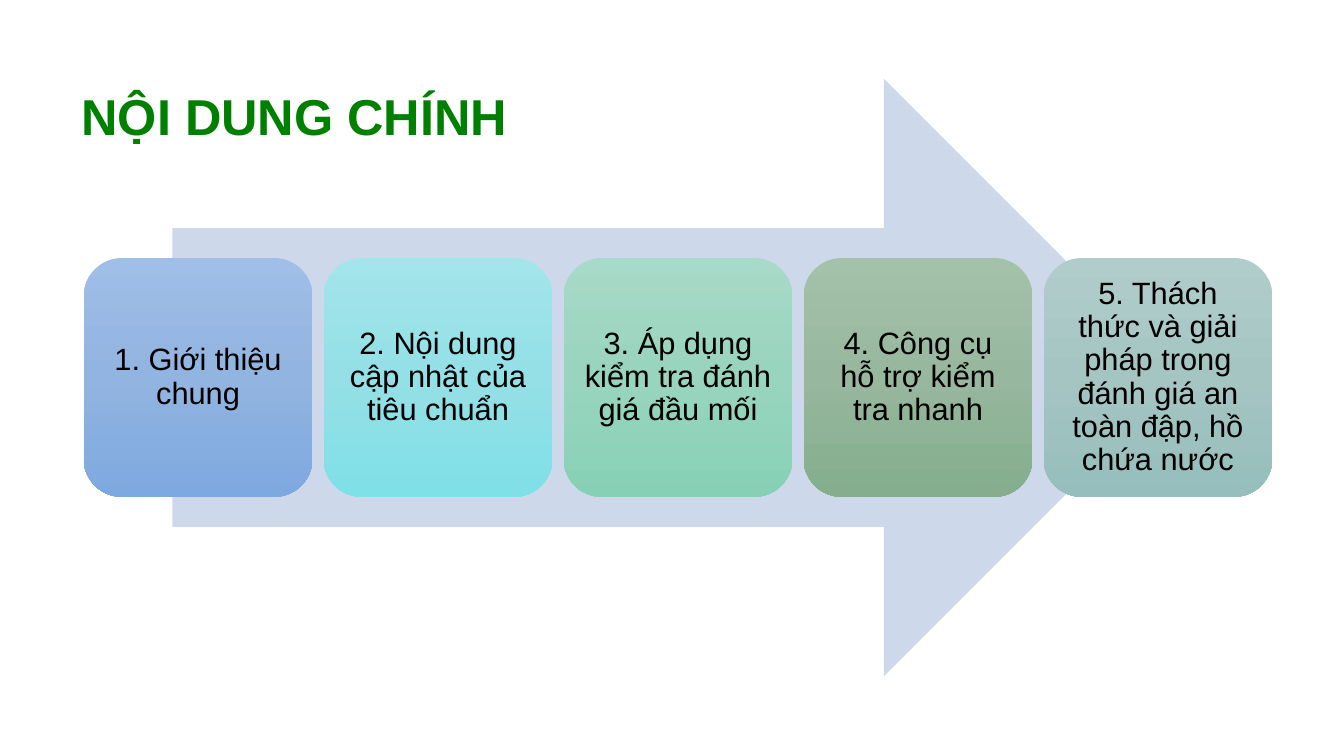
from copy import deepcopy
from dataclasses import dataclass

from pptx import Presentation
from pptx.dml.color import RGBColor as RGB
from pptx.enum.shapes import MSO_SHAPE as SHAPE
from pptx.enum.text import MSO_ANCHOR as ANCHOR, PP_ALIGN as ALIGN
from pptx.util import Inches, Pt


@dataclass(frozen=True)
class Theme:
    font: str = "Arial"
    title: str = "008000"
    text: str = "000000"
    arrow: str = "CDD9EA"
    title_size: float = 36
    card_size: float = 22


@dataclass(frozen=True)
class Grid:
    """Five columns; row 0 is the band that holds the cards."""
    left: float = 0.83
    top: float = 2.56
    col: float = 2.38
    row: float = 2.37
    gap: float = 0.11

    def box(self, col: float, row: float, cols: float, rows: float,
            gap: float = 0) -> tuple:
        return (Inches(self.left + col * self.col),
                Inches(self.top + row * self.row),
                Inches(cols * self.col - gap), Inches(rows * self.row))


@dataclass(frozen=True)
class Card:
    text: str
    stops: tuple  # colours from top to bottom


THEME = Theme()
GRID = Grid()
CARDS = [
    Card("1. Giới thiệu chung", ("9FBEE8", "92B4E0", "7EA9E0")),
    Card("2. Nội dung cập nhật của tiêu chuẩn", ("A2E5EB", "94E0E6", "7FE0E7")),
    Card("3. Áp dụng kiểm tra đánh giá đầu mối", ("A7DAC8", "99D4BE", "86D1B6")),
    Card("4. Công cụ hỗ trợ kiểm tra nhanh", ("A4C2AA", "97B79E", "84AE8D")),
    Card("5. Thách thức và giải pháp trong đánh giá an toàn đập, hồ chứa nước",
         ("B1CDCB", "A5C5C3", "95BEBC")),
]


def write(sp, text: str, *, size: float, color: str, bold: bool = False,
          align=ALIGN.LEFT, anchor=ANCHOR.MIDDLE, spacing: float = 1.0,
          inset: float = 0.1) -> None:
    tf = sp.text_frame
    tf.word_wrap = True
    tf.vertical_anchor = anchor
    tf.margin_left = tf.margin_right = Inches(inset)
    tf.margin_top = tf.margin_bottom = Inches(inset / 2)
    p = tf.paragraphs[0]
    p.alignment = align
    p.line_spacing = spacing
    r = p.add_run()
    r.text = text
    r.font.name = THEME.font
    r.font.size = Pt(size)
    r.font.bold = bold
    r.font.color.rgb = RGB.from_string(color)


def add_plain_shape(s, kind, box: tuple):
    sp = s.shapes.add_shape(kind, *box)
    sp.shadow.inherit = False
    sp.line.fill.background()
    return sp


def fill_gradient(sp, colors: tuple) -> None:
    sp.fill.gradient()
    sp.fill.gradient_angle = 270
    # The default gradient has two stops; add the middle one
    gs_list = sp._element.spPr.xpath(".//a:gsLst")[0]
    gs_list.insert(1, deepcopy(gs_list[0]))
    for i, (stop, color) in enumerate(zip(sp.fill.gradient_stops, colors)):
        stop.position = i / (len(colors) - 1)
        stop.color.rgb = RGB.from_string(color)


def add_card(s, index: int, card: Card) -> None:
    sp = add_plain_shape(s, SHAPE.ROUNDED_RECTANGLE,
                         GRID.box(index, 0, 1, 1, GRID.gap))
    fill_gradient(sp, card.stops)
    write(sp, card.text, size=THEME.card_size, color=THEME.text,
          align=ALIGN.CENTER, spacing=0.9, inset=0.09)


def main() -> None:
    prs = Presentation()
    prs.slide_width, prs.slide_height = Inches(13.33), Inches(7.5)
    s = prs.slides.add_slide(prs.slide_layouts[6])

    # Title
    title = s.shapes.add_textbox(*GRID.box(-0.05, -0.79, 5, 0.34))
    write(title, "NỘI DUNG CHÍNH", size=THEME.title_size, color=THEME.title,
          bold=True, anchor=ANCHOR.BOTTOM, spacing=1.2)

    # Arrow behind the cards
    arrow = add_plain_shape(s, SHAPE.RIGHT_ARROW, GRID.box(0.37, -0.75, 4.21, 2.5))
    arrow.fill.solid()
    arrow.fill.fore_color.rgb = RGB.from_string(THEME.arrow)

    # Cards
    for i, card in enumerate(CARDS):
        add_card(s, i, card)

    prs.save("out.pptx")


if __name__ == "__main__":
    main()
